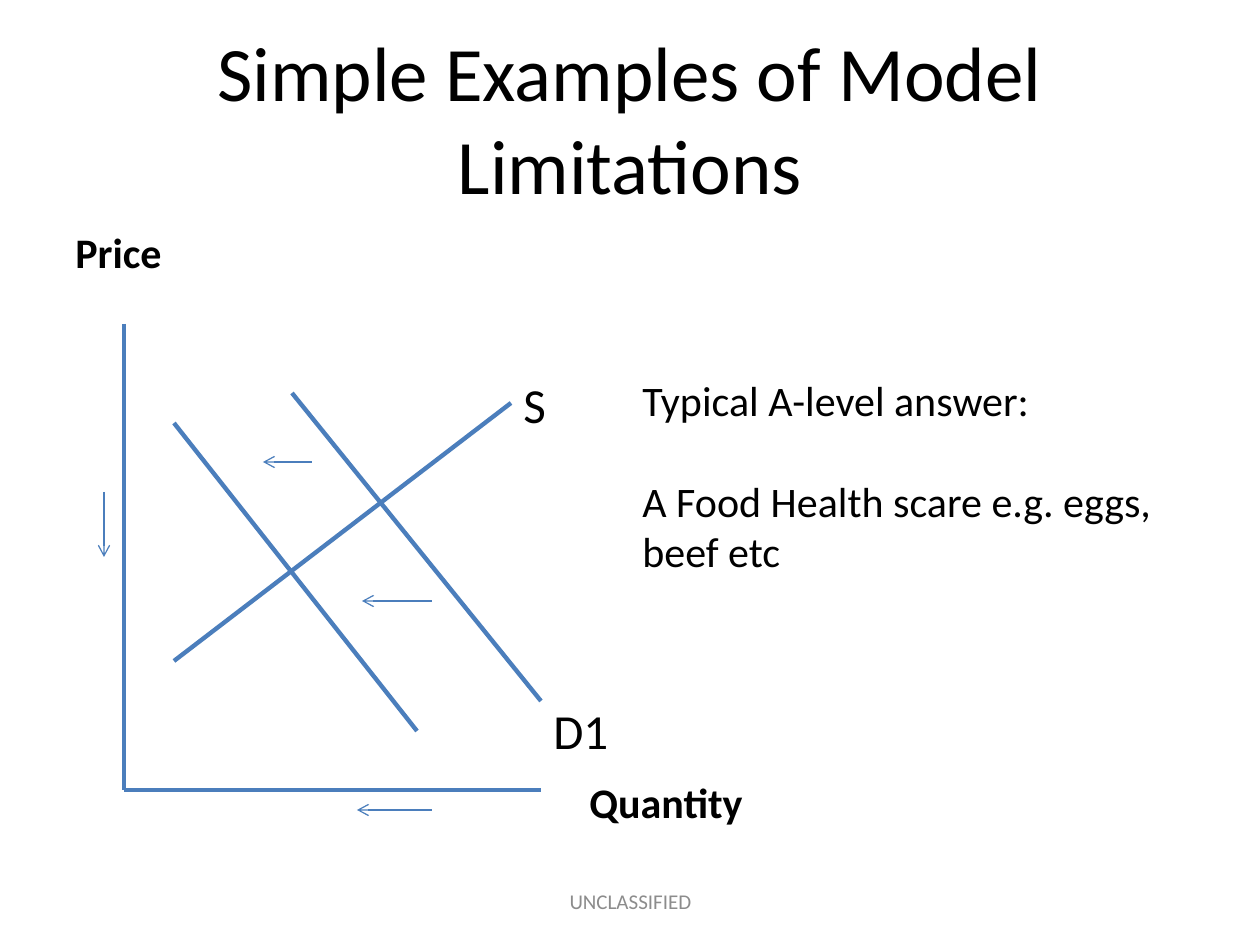
from lxml.etree import SubElement
from pptx import Presentation
from pptx.dml.color import RGBColor
from pptx.enum.shapes import MSO_CONNECTOR as Connector
from pptx.enum.text import MSO_ANCHOR as Anchor, PP_ALIGN as Align
from pptx.oxml.ns import qn
from pptx.util import Emu, Pt

PX_PER_INCH = 126
FONT = "Calibri"
BLACK, GREY, BLUE = "000000", "8C8C8C", "4B7EBC"
ANSWER_GAP = 29

CENTRED_TEXTS = [
    ("Simple Examples of Model Limitations", (63, 38, 1134, 158), 44, BLACK),
    ("UNCLASSIFIED", (431, 876, 399, 50), 12, GREY),
]
AXIS_TITLES = [
    ("Price", (63, 220, 1134, 624), True),
    ("Quantity", (577, 770, 180, 63), False),
]
CURVE_LABELS = [
    ("S", (511, 368, 48, 72)),
    ("D1", (541, 694, 81, 72)),
]
ANSWER = ["Typical A-level answer:", "A Food Health scare e.g. eggs, beef etc"]
ANSWER_PLACE = (630, 368, 600, 267)

AXES = [(124, 324, 124, 790), (124, 790, 541, 790)]
SUPPLY = [(174, 661, 511, 403)]
DEMAND = [(292, 393, 541, 701), (174, 423, 417, 731)]
SHIFTS = [
    (312, 462, 263, 462),
    (432, 601, 362, 601),
    (104, 492, 104, 557),
    (432, 810, 357, 810),
]


def px(value):
    return Emu(round(value * 914400 / PX_PER_INCH))


def color(value):
    return RGBColor.from_string(value)


def add_text(page, lines, place, size, fill=BLACK, bold=False, centred=False,
             wrap=True, gap=0):
    frame = page.shapes.add_textbox(*map(px, place)).text_frame
    frame.word_wrap = wrap
    frame.vertical_anchor = Anchor.MIDDLE if centred else Anchor.TOP
    for index, line in enumerate(lines):
        para = frame.add_paragraph() if index else frame.paragraphs[0]
        para.text = line
        para.alignment = Align.CENTER if centred else Align.LEFT
        para.space_before = Pt(gap if index else 0)
        para.font.name = FONT
        para.font.size = Pt(size)
        para.font.bold = bold
        para.font.color.rgb = color(fill)


def add_line(page, ends, width, arrow=False):
    line = page.shapes.add_connector(Connector.STRAIGHT, *map(px, ends))
    line.line.color.rgb = color(BLUE)
    line.line.width = Pt(width)
    if arrow:
        SubElement(line.line._get_or_add_ln(), qn("a:tailEnd"), type="arrow")
    SubElement(line._element.spPr, qn("a:effectLst"))


def main():
    """Build the supply and demand slide."""
    deck = Presentation()
    deck.slide_width, deck.slide_height = px(1260), px(945)
    page = deck.slides.add_slide(deck.slide_layouts[6])

    for text, place, size, fill in CENTRED_TEXTS:
        add_text(page, [text], place, size, fill, centred=True)
    for text, place, wrap in AXIS_TITLES:
        add_text(page, [text], place, 24, bold=True, wrap=wrap)
    for ends in AXES + SUPPLY + DEMAND:
        add_line(page, ends, 2.5)
    for ends in SHIFTS:
        add_line(page, ends, 0.75, arrow=True)
    add_text(page, ANSWER, ANSWER_PLACE, 24, gap=ANSWER_GAP)
    for text, place in CURVE_LABELS:
        add_text(page, [text], place, 28, wrap=False)

    deck.save("out.pptx")


if __name__ == "__main__":
    main()
